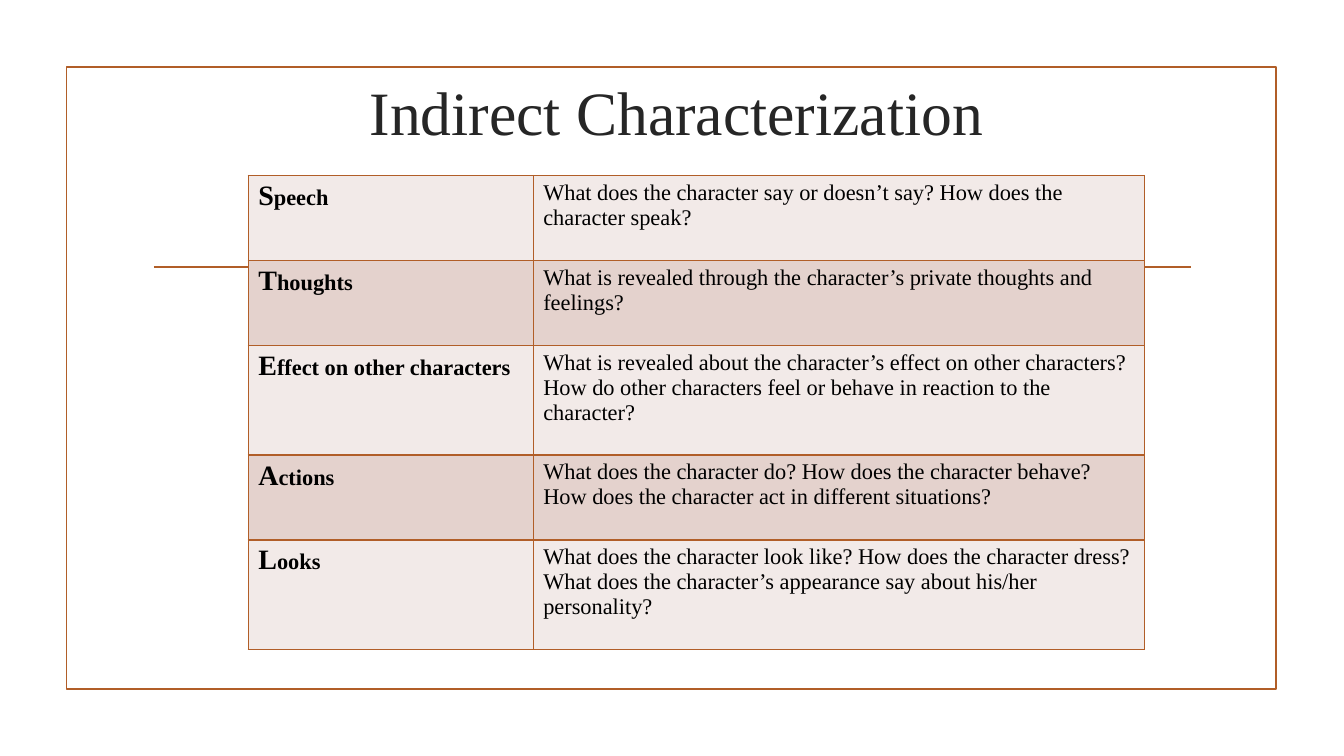
from lxml import etree
from pptx import Presentation, util as u
from pptx.dml.color import RGBColor
from pptx.enum import shapes, text
from pptx.oxml import ns

RUST = RGBColor(0xB1, 0x5E, 0x28)
CHARCOAL = RGBColor(0x26, 0x26, 0x26)
BLACK = RGBColor(0, 0, 0)
BANDS = (RGBColor(0xF2, 0xEA, 0xE8), RGBColor(0xE4, 0xD2, 0xCD))

# Trait, question, row height
TRAITS = [
    ("Speech", "What does the character say or doesn’t say? "
     "How does the character speak?", 60.7),
    ("Thoughts", "What is revealed through the character’s private "
     "thoughts and feelings?", 60.7),
    ("Effect on other characters", "What is revealed about the character’s "
     "effect on other characters? How do other characters feel or behave "
     "in reaction to the character?", 78.2),
    ("Actions", "What does the character do? How does the character behave? "
     "How does the character act in different situations?", 60.7),
    ("Looks", "What does the character look like? How does the character "
     "dress? What does the character’s appearance say about his/her "
     "personality?", 78.2),
]


def add_text(paragraph, words, size=16, color=BLACK, bold=False):
    run = paragraph.add_run()
    run.text = words
    run.font.name = "Times New Roman"
    run.font.size = u.Pt(size)
    run.font.bold = bold
    run.font.color.rgb = color


class SlideBuilder:
    line_color = RUST
    line_width = 1.25

    def __init__(self, presentation):
        self.slide = presentation.slides.add_slide(presentation.slide_layouts[6])

    def style_line(self, line):
        line.color.rgb = self.line_color
        line.width = u.Pt(self.line_width)

    def frame(self, *box):
        shape = self.slide.shapes.add_shape(
            shapes.MSO_SHAPE.RECTANGLE, *map(u.Pt, box))
        shape.shadow.inherit = False
        shape.fill.background()
        self.style_line(shape.line)

    def rule(self, left, right, top):
        connector = self.slide.shapes.add_connector(
            shapes.MSO_CONNECTOR.STRAIGHT, *map(u.Pt, (left, top, right, top)))
        self.style_line(connector.line)
        etree.SubElement(connector._element.spPr, ns.qn("a:effectLst"))

    def title(self, words, *box):
        text_frame = self.slide.shapes.add_textbox(*map(u.Pt, box)).text_frame
        text_frame.word_wrap = True
        text_frame.vertical_anchor = text.MSO_ANCHOR.MIDDLE
        paragraph = text_frame.paragraphs[0]
        paragraph.alignment = text.PP_ALIGN.CENTER
        add_text(paragraph, words, size=44, color=CHARCOAL)

    def border(self, cell):
        properties = cell._tc.get_or_add_tcPr()
        for side in ("lnL", "lnR", "lnT", "lnB"):
            line = etree.SubElement(properties, ns.qn("a:" + side), w=str(u.Pt(1)))
            fill = etree.SubElement(line, ns.qn("a:solidFill"))
            etree.SubElement(fill, ns.qn("a:srgbClr"), val=str(self.line_color))

    def trait_table(self, traits, left, top, widths):
        height = sum(trait[2] for trait in traits)
        table = self.slide.shapes.add_table(
            len(traits), len(widths),
            *map(u.Pt, (left, top, sum(widths), height))).table
        table.first_row = False
        for column, width in zip(table.columns, widths):
            column.width = u.Pt(width)
        for index, (name, question, row_height) in enumerate(traits):
            row = table.rows[index]
            row.height = u.Pt(row_height)
            for cell in row.cells:
                self.border(cell)
                cell.fill.solid()
                cell.fill.fore_color.rgb = BANDS[index % 2]
            name_cell, question_cell = row.cells
            paragraph = name_cell.text_frame.paragraphs[0]
            add_text(paragraph, name[0], size=20, bold=True)
            add_text(paragraph, name[1:], bold=True)
            add_text(question_cell.text_frame.paragraphs[0], question)


def main():
    presentation = Presentation()
    presentation.slide_width = u.Pt(960)
    presentation.slide_height = u.Pt(540)
    builder = SlideBuilder(presentation)

    # Background frame and rule
    builder.frame(47.6, 48, 864, 444)
    builder.rule(110, 850.5, 190.8)

    # Heading and table
    builder.title("Indirect Characterization ", 111, 27.5, 756, 103)
    builder.trait_table(TRAITS, 177.3, 125.4, (203.6, 436.4))

    presentation.save("out.pptx")


if __name__ == "__main__":
    main()
